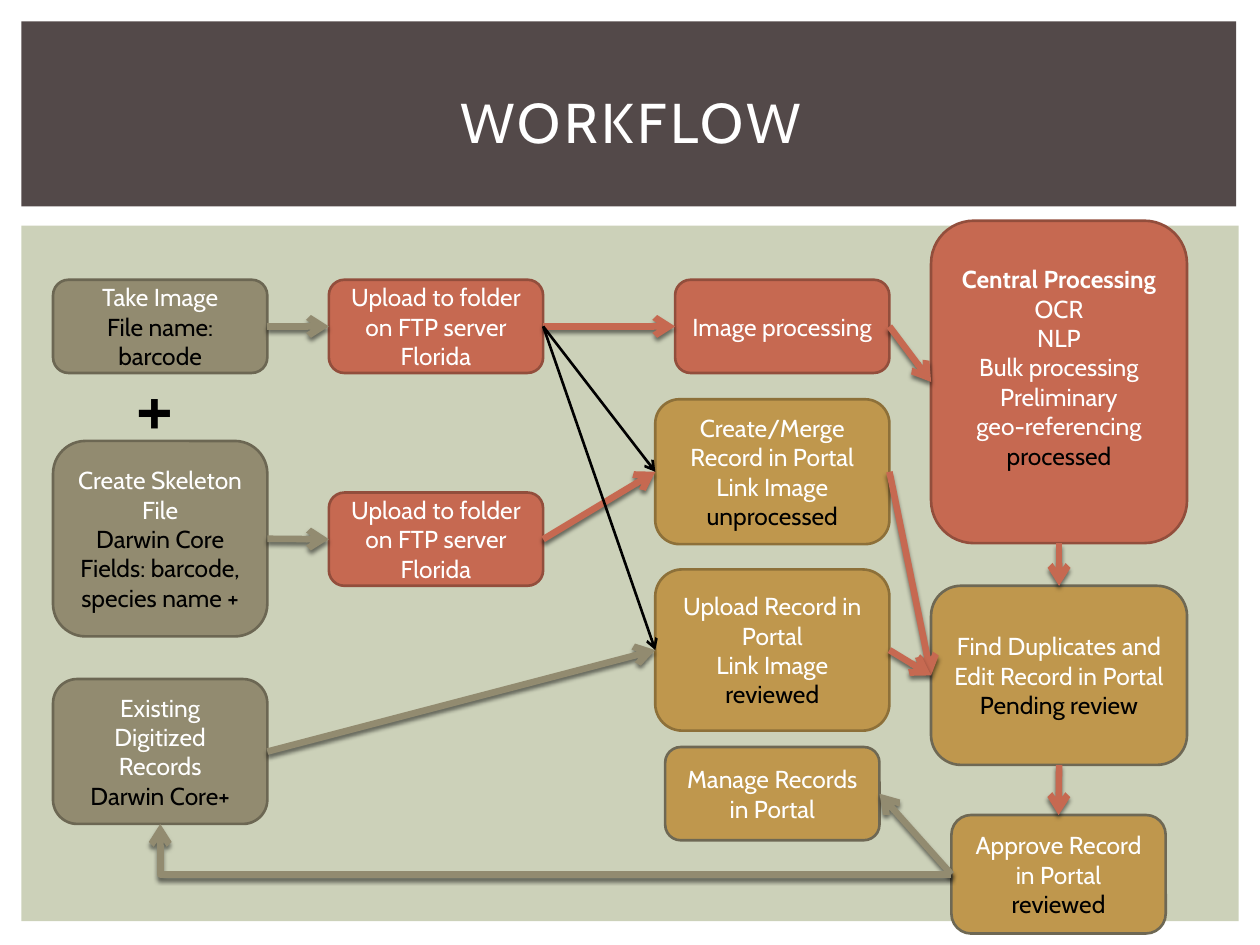
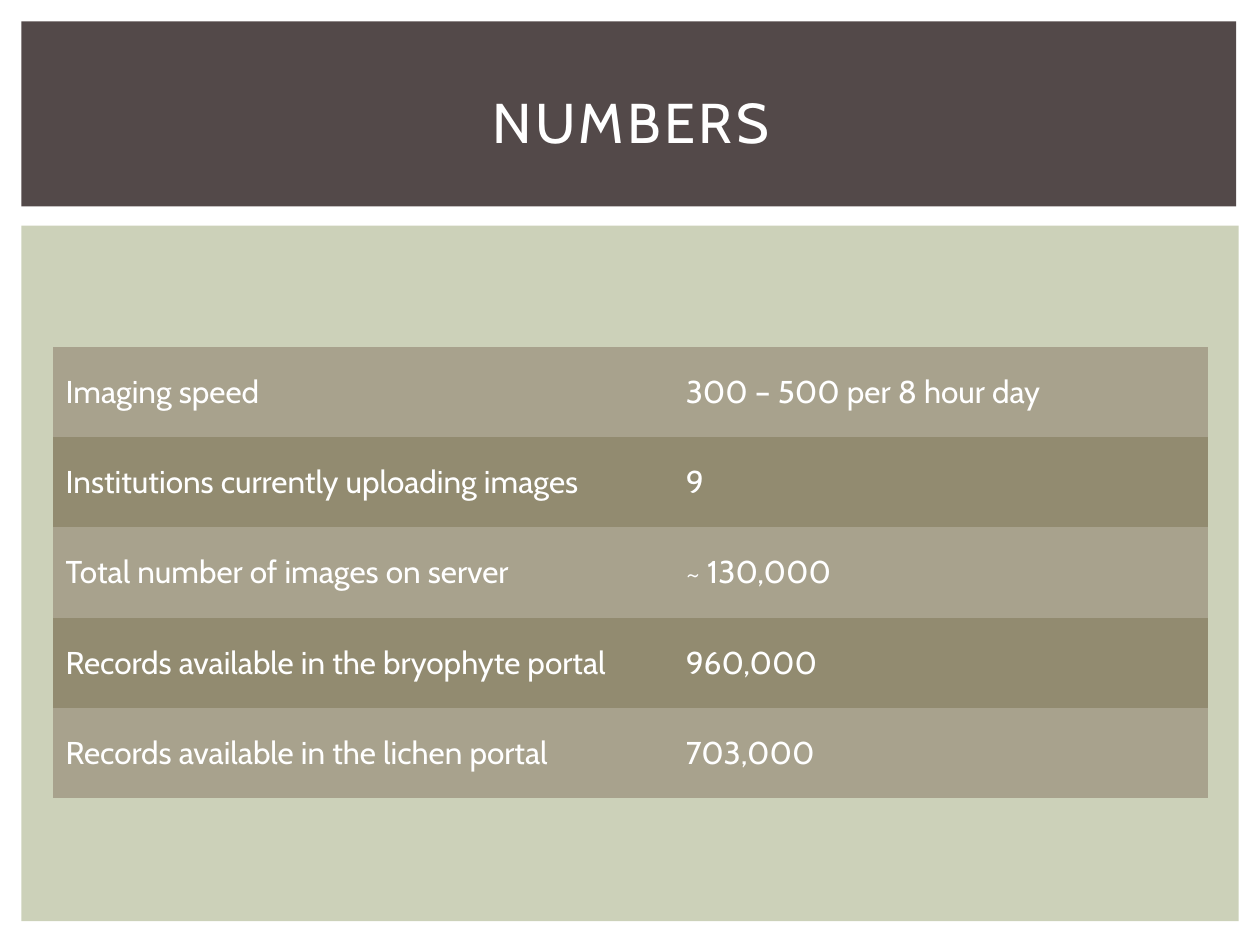
import pptx
import pptx.dml.color
import pptx.enum.shapes
import pptx.enum.text
import pptx.oxml
import pptx.oxml.ns
import pptx.util
from pptx.util import Cm

RGBColor = pptx.dml.color.RGBColor
WHITE = RGBColor(0xFF, 0xFF, 0xFF)
BLACK = RGBColor(0x00, 0x00, 0x00)
SAGE = RGBColor(0xCC, 0xD1, 0xB9)
BROWN = RGBColor(0x53, 0x49, 0x49)
OLIVE = RGBColor(0x92, 0x8B, 0x70)
OLIVE_LIGHT = RGBColor(0xA8, 0xA2, 0x8D)
OLIVE_DARK = RGBColor(0x6C, 0x67, 0x53)
RUST = RGBColor(0xC6, 0x69, 0x51)
RUST_DARK = RGBColor(0x92, 0x4E, 0x3C)
GOLD = RGBColor(0xBF, 0x97, 0x4D)
GOLD_DARK = RGBColor(0x8D, 0x70, 0x39)
GRAY = RGBColor(0x6E, 0x68, 0x54)

TOP, LEFT, BOTTOM, RIGHT = range(4)
TITLE_ONLY = 5
NO_TABLE_STYLE = "{2D5ABB26-0587-4C30-8999-92F81FD0307C}"
NAMESPACE = pptx.oxml.ns.nsdecls("a")
ARROWHEAD = f'<a:tailEnd {NAMESPACE} type="arrow"/>'
NO_EFFECT = f"<a:effectLst {NAMESPACE}/>"
SHADOW = (
    f'<a:effectLst {NAMESPACE}><a:outerShdw blurRad="31750" dist="25400" dir="5400000" rotWithShape="0">'
    '<a:srgbClr val="000000"><a:alpha val="50000"/></a:srgbClr></a:outerShdw></a:effectLst>'
)


class Deck:
    font_name = "Cabin"

    def __init__(self):
        self.presentation = pptx.Presentation()
        self.presentation.slide_width = Cm(25.4)
        self.presentation.slide_height = Cm(19.05)
        self.layout = self.presentation.slide_layouts[TITLE_ONLY]
        self.slide = None

    def add_slide(self, title):
        self.slide = self.presentation.slides.add_slide(self.layout)
        shape = self.slide.shapes.title
        shape.left, shape.top = Cm(1.07), Cm(0.99)
        shape.width, shape.height = Cm(23.29), Cm(2.92)
        shape.text_frame.vertical_anchor = pptx.enum.text.MSO_ANCHOR.MIDDLE
        self.set_text(shape.text_frame.paragraphs[0], title, 32, WHITE, centered=True)
        for properties in shape.element.iter(pptx.oxml.ns.qn("a:rPr")):
            properties.set("spc", "200")

    def add_layout_band(self, position, left, top, width, height, color):
        shape = self.slide.shapes.add_shape(
            pptx.enum.shapes.MSO_SHAPE.RECTANGLE, Cm(left), Cm(top), Cm(width), Cm(height))
        shape.shadow.inherit = False
        shape.fill.solid()
        shape.fill.fore_color.rgb = color
        shape.line.fill.background()
        self.layout.shapes.element.insert(position, shape.element)

    def set_text(self, paragraph, text, size, color, centered=False, bold=False):
        paragraph.text = text
        if centered:
            paragraph.alignment = pptx.enum.text.PP_ALIGN.CENTER
        for font in (paragraph.font, *(run.font for run in paragraph.runs)):
            font.name = self.font_name
            font.size = pptx.util.Pt(size)
            font.color.rgb = color
            font.bold = bold

    def add_box(self, left, top, width, height, fill, outline, lines, status=None, bold_heading=False):
        shape = self.slide.shapes.add_shape(
            pptx.enum.shapes.MSO_SHAPE.ROUNDED_RECTANGLE, Cm(left), Cm(top), Cm(width), Cm(height))
        shape.shadow.inherit = False
        shape.fill.solid()
        shape.fill.fore_color.rgb = fill
        shape.line.color.rgb = outline
        shape.line.width = pptx.util.Pt(1.5)
        frame = shape.text_frame
        frame.word_wrap = True
        frame.vertical_anchor = pptx.enum.text.MSO_ANCHOR.MIDDLE
        colored_lines = [(line, WHITE) for line in lines]
        if status:
            colored_lines.append((status, BLACK))
        for index, (line, color) in enumerate(colored_lines):
            paragraph = frame.add_paragraph() if index else frame.paragraphs[0]
            self.set_text(paragraph, line, 14, color, centered=True, bold=bold_heading and index == 0)
        return shape

    def add_label(self, left, top, width, height, text, size):
        shape = self.slide.shapes.add_textbox(Cm(left), Cm(top), Cm(width), Cm(height))
        shape.text_frame.word_wrap = True
        self.set_text(shape.text_frame.paragraphs[0], text, size, BLACK)

    def style_arrow(self, connector, color, width, effect):
        connector.line.color.rgb = color
        connector.line.width = pptx.util.Pt(width)
        properties = connector.element.spPr
        properties.find(pptx.oxml.ns.qn("a:ln")).append(pptx.oxml.parse_xml(ARROWHEAD))
        properties.append(pptx.oxml.parse_xml(effect))

    def add_arrow(self, source, source_side, target, target_side, color, width=3.75, effect=SHADOW):
        connector = self.slide.shapes.add_connector(pptx.enum.shapes.MSO_CONNECTOR.STRAIGHT, 0, 0, 0, 0)
        connector.begin_connect(source, source_side)
        connector.end_connect(target, target_side)
        self.style_arrow(connector, color, width, effect)

    def add_return_arrow(self, source, target, color):
        connector = self.slide.shapes.add_connector(
            pptx.enum.shapes.MSO_CONNECTOR.ELBOW,
            target.left + target.width // 2, target.top + target.height,
            source.left, source.top + source.height // 2)
        properties = connector.element.spPr
        properties.find(pptx.oxml.ns.qn("a:xfrm")).set("rot", "10800000")
        properties.find(pptx.oxml.ns.qn("a:prstGeom")).set("prst", "bentConnector2")
        self.style_arrow(connector, color, 3.75, SHADOW)

    def add_table(self, left, top, column_widths, row_height, rows):
        frame = self.slide.shapes.add_table(
            len(rows), len(column_widths), Cm(left), Cm(top),
            Cm(sum(column_widths)), Cm(row_height * len(rows)))
        table = frame.table
        table.first_row = False
        for style in frame.element.iter(pptx.oxml.ns.qn("a:tableStyleId")):
            style.text = NO_TABLE_STYLE
        for column, width in zip(table.columns, column_widths):
            column.width = Cm(width)
        for row_index, (row, values) in enumerate(zip(table.rows, rows)):
            row.height = Cm(row_height)
            for cell, value in zip(row.cells, values):
                cell.fill.solid()
                cell.fill.fore_color.rgb = OLIVE if row_index % 2 else OLIVE_LIGHT
                cell.vertical_anchor = pptx.enum.text.MSO_ANCHOR.MIDDLE
                self.set_text(cell.text_frame.paragraphs[0], value, 18, WHITE)


def build_workflow(deck):
    deck.add_slide("WORKFLOW")
    deck.add_layout_band(2, 0.43, 4.55, 24.54, 14.02, SAGE)
    deck.add_layout_band(3, 0.43, 0.43, 24.49, 3.73, BROWN)

    width, height = 4.32, 1.88
    upload_text = ["Upload to folder on FTP server Florida"]
    take_image = deck.add_box(
        1.07, 5.64, width, height, OLIVE, OLIVE_DARK, ["Take Image"], "File name: barcode")
    skeleton = deck.add_box(
        1.07, 8.89, width, 3.94, OLIVE, OLIVE_DARK, ["Create Skeleton File"],
        "Darwin Core Fields: barcode, species name +")
    existing = deck.add_box(
        1.07, 13.69, width, 2.92, OLIVE, OLIVE_DARK, ["Existing Digitized Records"], "Darwin Core+")
    upload_image = deck.add_box(6.63, 5.64, width, height, RUST, RUST_DARK, upload_text)
    upload_skeleton = deck.add_box(6.63, 9.93, width, height, RUST, RUST_DARK, upload_text)
    processing = deck.add_box(13.61, 5.64, width, height, RUST, RUST_DARK, ["Image processing"])
    merge = deck.add_box(
        13.21, 8.05, 4.72, 2.92, GOLD, GOLD_DARK,
        ["Create/Merge Record in Portal", "Link Image"], "unprocessed")
    upload_record = deck.add_box(
        13.21, 11.48, 4.72, 3.25, GOLD, GOLD_DARK,
        ["Upload Record in Portal", "Link Image"], "reviewed")
    manage = deck.add_box(13.41, 15.06, width, height, GOLD, GRAY, ["Manage Records in Portal"])
    central = deck.add_box(
        18.77, 4.45, 5.16, 6.5, RUST, RUST_DARK,
        ["Central Processing", "OCR", "NLP", "Bulk processing", "Preliminary", "geo-referencing"],
        "processed", bold_heading=True)
    central.text_frame.margin_bottom = Cm(0.72)
    duplicates = deck.add_box(
        18.77, 11.81, 5.16, 3.61, GOLD, GRAY,
        ["Find Duplicates and Edit Record in Portal"], "Pending review")
    approve = deck.add_box(
        19.18, 16.43, width, 2.39, GOLD, GRAY, ["Approve Record in Portal"], "reviewed")

    for source, target, color in (
        (take_image, upload_image, OLIVE),
        (skeleton, upload_skeleton, OLIVE),
        (existing, upload_record, OLIVE),
        (upload_image, processing, RUST),
        (upload_skeleton, merge, RUST),
        (processing, central, RUST),
        (merge, duplicates, RUST),
        (upload_record, duplicates, RUST),
    ):
        deck.add_arrow(source, RIGHT, target, LEFT, color)
    for target in (merge, upload_record):
        deck.add_arrow(upload_image, RIGHT, target, LEFT, BLACK, 1.5, NO_EFFECT)
    for source, target in ((central, duplicates), (duplicates, approve)):
        deck.add_arrow(source, BOTTOM, target, TOP, RUST)
    deck.add_arrow(approve, LEFT, manage, RIGHT, OLIVE)
    deck.add_return_arrow(approve, existing, OLIVE)
    deck.add_label(2.49, 7.01, 1.24, 2.31, "+", 48)


def build_numbers(deck):
    deck.add_slide("NUMBERS")
    deck.add_table(1.07, 6.99, (12.5, 10.79), 1.82, [
        ("Imaging speed", "300 – 500 per 8 hour day"),
        ("Institutions currently uploading images", "9"),
        ("Total number of images on server", "~ 130,000"),
        ("Records available in the bryophyte portal", "960,000"),
        ("Records available in the lichen portal", "703,000"),
    ])


def main():
    deck = Deck()
    build_workflow(deck)
    build_numbers(deck)
    deck.presentation.save("out.pptx")


if __name__ == "__main__":
    main()
